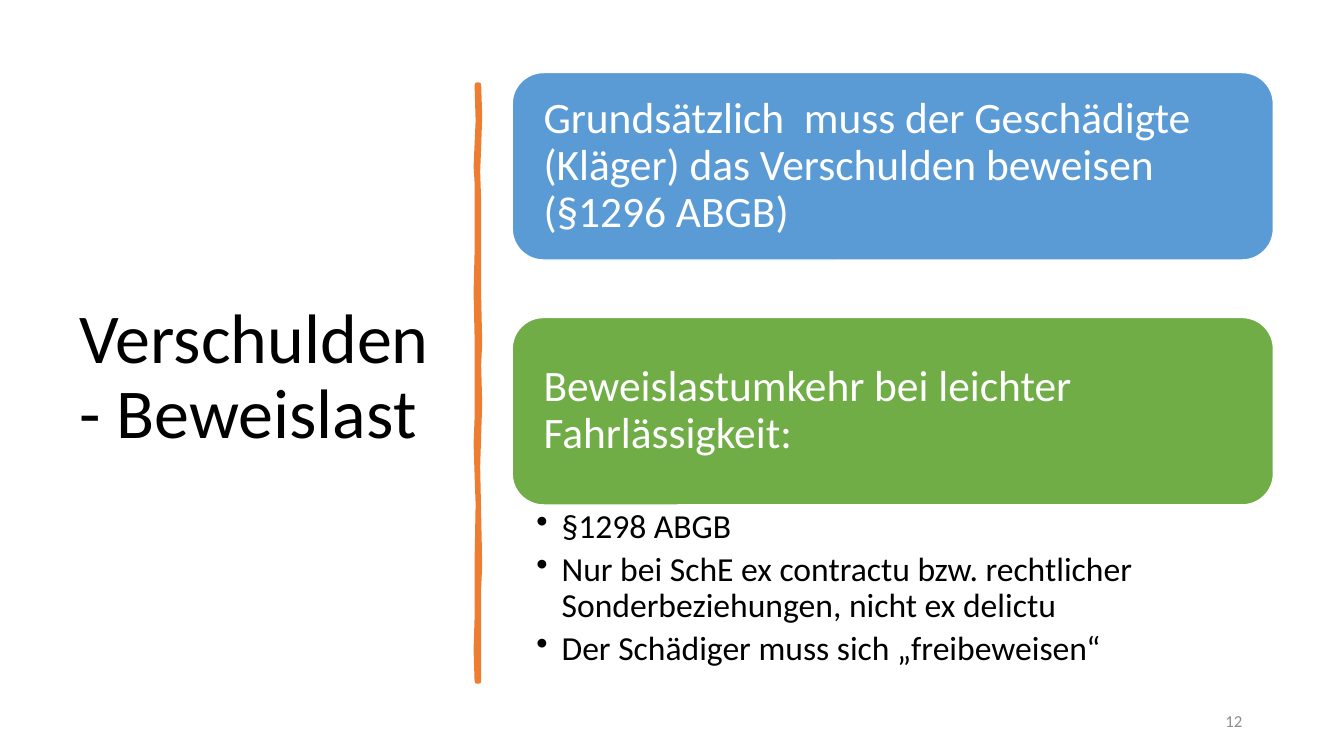
from lxml import etree
from pptx import Presentation
from pptx.dml.color import RGBColor
from pptx.enum.shapes import MSO_SHAPE as Shape
from pptx.enum.text import MSO_ANCHOR as Anchor, PP_ALIGN as Align
from pptx.oxml.ns import qn
from pptx.util import Pt

PX = 9144  # 100 px to the inch
COLORS = {"black": "000000", "white": "FFFFFF", "grey": "8C8C8C",
          "blue": "5B9BD5", "green": "70AD47", "orange": "ED7D31"}


def color(name):
    return RGBColor.from_string(COLORS[name])


def write(shape, lines, size, color_name, anchor=Anchor.MIDDLE, insets=(10, 5), spacing=0.9):
    frame = shape.text_frame
    frame.word_wrap = True
    frame.vertical_anchor = anchor
    frame.margin_left = frame.margin_right = insets[0] * PX
    frame.margin_top = frame.margin_bottom = insets[1] * PX
    frame.text = "\n".join(lines)
    for paragraph in frame.paragraphs:
        paragraph.alignment = Align.LEFT
        paragraph.line_spacing = spacing
        paragraph.font.name = "Calibri"
        paragraph.font.size = Pt(size)
        paragraph.font.color.rgb = color(color_name)
    return frame.paragraphs


presentation = Presentation()
presentation.slide_width = 1333 * PX
presentation.slide_height = 750 * PX
slide = presentation.slides.add_slide(presentation.slide_layouts[6])
shapes = slide.shapes

# Title
title = shapes.add_textbox(69 * PX, 70 * PX, 374 * PX, 611 * PX)
write(title, ["Verschulden- Beweislast"], 50, "black")

# Hand-drawn divider: right edge downwards, left edge back up
right_edge = [(475, 84), (476, 115), (475, 146), (474, 170), (475, 200), (475, 294),
              (476, 340), (475, 362), (476, 400), (474, 463), (475, 510), (476, 560),
              (475, 584), (475, 676)]
left_edge = [(473, 676), (472, 645), (473, 613), (473, 557), (474, 500), (473, 471),
             (472, 440), (473, 415), (473, 335), (472, 290), (473, 250), (473, 181),
             (472, 165), (474, 120), (473, 84)]
builder = shapes.build_freeform(*right_edge[0], scale=PX)
builder.add_line_segments(right_edge[1:] + left_edge, close=True)
divider = builder.convert_to_shape()
divider.shadow.inherit = False
divider.fill.solid()
divider.fill.fore_color.rgb = color("orange")
divider.line.color.rgb = color("orange")
divider.line.width = Pt(3.25)

# Two cards
cards = [
    ("blue", "Grundsätzlich  muss der Geschädigte (Kläger) das Verschulden beweisen (§1296 ABGB)"),
    ("green", "Beweislastumkehr bei leichter Fahrlässigkeit:"),
]
for index, (fill, text) in enumerate(cards):
    card = shapes.add_shape(Shape.ROUNDED_RECTANGLE,
                            508 * PX, (72 + 243 * index) * PX, 755 * PX, 186 * PX)
    card.shadow.inherit = False
    card.fill.solid()
    card.fill.fore_color.rgb = color(fill)
    card.line.color.rgb = color("white")
    card.line.width = Pt(1)
    write(card, [text], 31, "white", insets=(22, 22))

# Bullets under the second card
points = ["§1298 ABGB",
          "Nur bei SchE ex contractu bzw. rechtlicher Sonderbeziehungen, nicht ex delictu",
          "Der Schädiger muss sich „freibeweisen“"]
bullets = shapes.add_textbox(508 * PX, 501 * PX, 755 * PX, 172 * PX)
for paragraph in write(bullets, points, 24, "black", Anchor.TOP, (24, 4)):
    paragraph.space_after = Pt(5)
    properties = paragraph._p.get_or_add_pPr()
    properties.set("marL", str(25 * PX))
    properties.set("indent", str(-25 * PX))
    bullet = etree.Element(qn("a:buChar"), char="•")
    properties.find(qn("a:spcAft")).addnext(bullet)

# Slide number
number = shapes.add_textbox(942 * PX, 695 * PX, 300 * PX, 40 * PX)
write(number, ["12"], 12, "grey", spacing=1.0)[0].alignment = Align.RIGHT

presentation.save("out.pptx")
